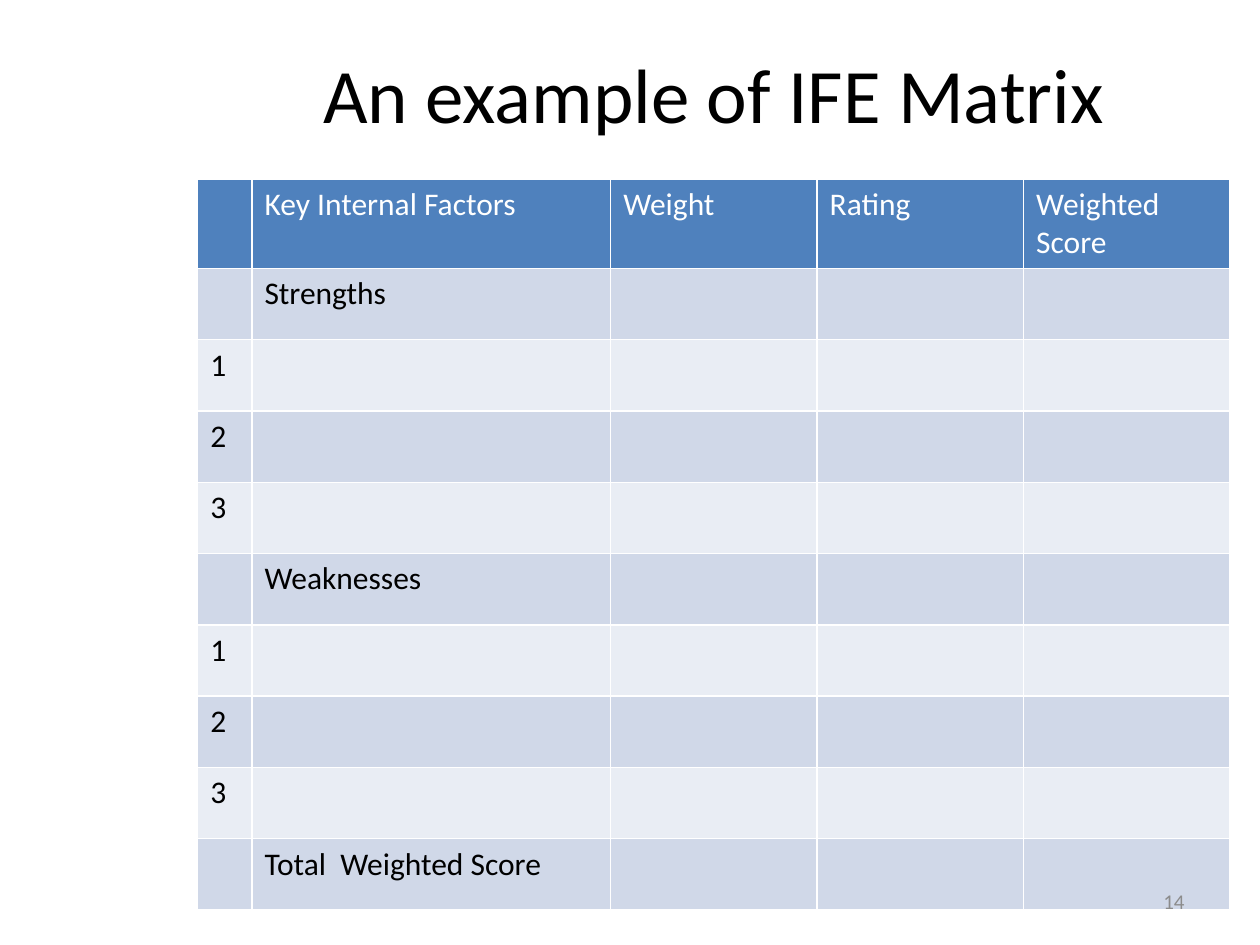
"""Build the IFE matrix example slide."""
import pptx
import pptx.dml.color
import pptx.enum.text
import pptx.util

Pt = pptx.util.Pt
ALIGN = pptx.enum.text.PP_ALIGN
MIDDLE = pptx.enum.text.MSO_ANCHOR.MIDDLE

TITLE = "An example of IFE Matrix"
PAGE_NUMBER = "14"
HEADINGS = ["", "Key Internal Factors", "Weight", "Rating", "Weighted Score"]
FACTORS = [
    ("", "Strengths"), ("1", ""), ("2", ""), ("3", ""),
    ("", "Weaknesses"), ("1", ""), ("2", ""), ("3", ""),
    ("", "Total  Weighted Score"),
]
THEME = {
    "font": "Calibri",
    "title_size": 44, "table_size": 18, "number_size": 12,
    "text": "000000", "header_text": "FFFFFF", "number": "8C8C8C",
    "header": "4F81BD", "bands": ("D0D8E8", "E9EDF4"),
}
LEFT, TABLE_TOP = 113, 102.25
COLUMN_WIDTHS = [31, 205, 118, 118, 118]
ROW_HEIGHT = 40.75


def color(name):
    return pptx.dml.color.RGBColor.from_string(name)


def write(frame, text, size, text_color, alignment=ALIGN.LEFT):
    paragraph = frame.paragraphs[0]
    paragraph.text = text
    paragraph.alignment = alignment
    font = paragraph.font
    font.name, font.size, font.bold = THEME["font"], Pt(size), False
    font.color.rgb = color(text_color)


def add_title(slide):
    title = slide.shapes.title
    title.left, title.top = Pt(LEFT), Pt(21.6)
    title.width, title.height = Pt(sum(COLUMN_WIDTHS)), Pt(62.6)
    title.text_frame.vertical_anchor = MIDDLE
    write(title.text_frame, TITLE, THEME["title_size"], THEME["text"], ALIGN.CENTER)


def add_matrix(slide):
    rows = [HEADINGS] + [[*factor, "", "", ""] for factor in FACTORS]
    table = slide.shapes.add_table(
        len(rows), len(HEADINGS), Pt(LEFT), Pt(TABLE_TOP),
        Pt(sum(COLUMN_WIDTHS)), Pt(ROW_HEIGHT * len(rows))).table
    for column, width in zip(table.columns, COLUMN_WIDTHS):
        column.width = Pt(width)
    for row_index, texts in enumerate(rows):
        table.rows[row_index].height = Pt(ROW_HEIGHT)
        is_header = row_index == 0
        fill = THEME["header"] if is_header else THEME["bands"][(row_index - 1) % 2]
        text_color = THEME["header_text"] if is_header else THEME["text"]
        for column_index, text in enumerate(texts):
            cell = table.cell(row_index, column_index)
            cell.fill.solid()
            cell.fill.fore_color.rgb = color(fill)
            write(cell.text_frame, text, THEME["table_size"], text_color)


def add_page_number(slide):
    box = slide.shapes.add_textbox(Pt(516), Pt(500.5), Pt(168), Pt(28.75))
    box.text_frame.word_wrap = True
    box.text_frame.vertical_anchor = MIDDLE
    write(box.text_frame, PAGE_NUMBER, THEME["number_size"], THEME["number"], ALIGN.RIGHT)


def main():
    presentation = pptx.Presentation()
    presentation.slide_width, presentation.slide_height = Pt(720), Pt(540)
    slide = presentation.slides.add_slide(presentation.slide_layouts[5])
    add_title(slide)
    add_matrix(slide)
    add_page_number(slide)
    presentation.save("out.pptx")


if __name__ == "__main__":
    main()
